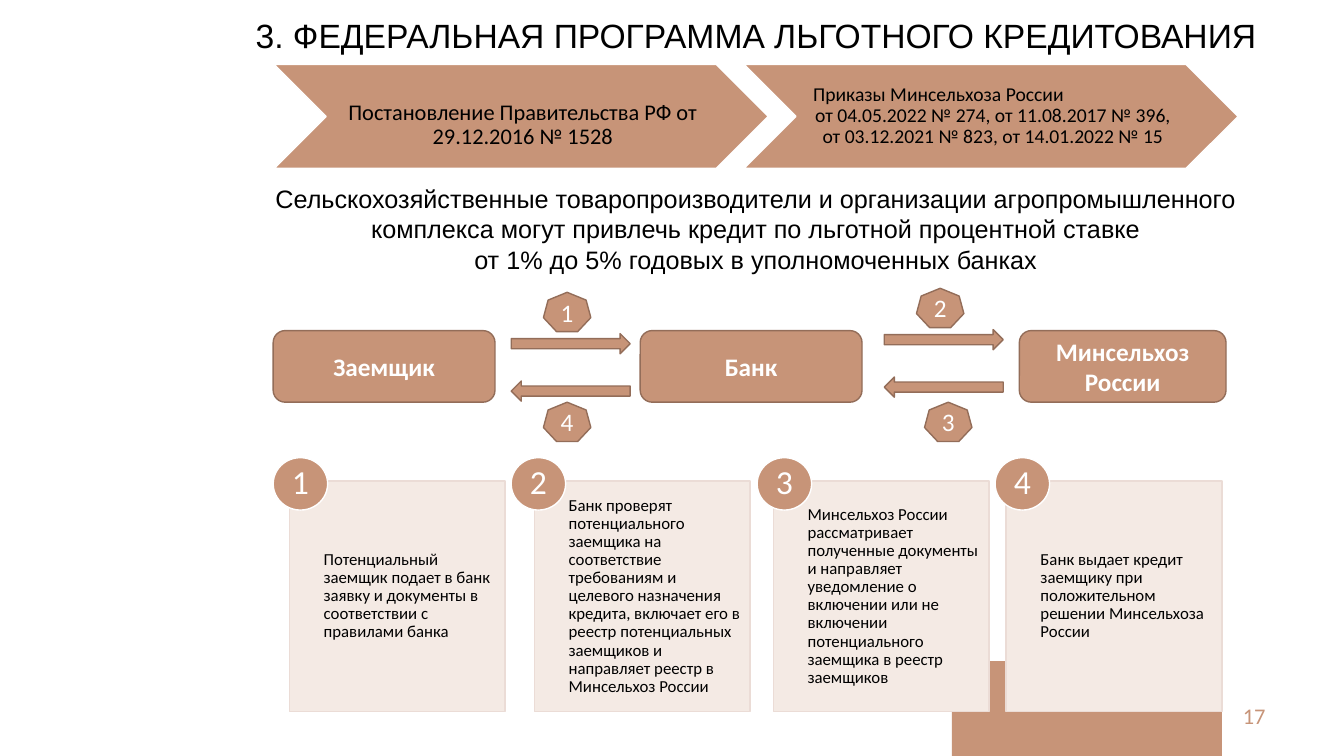
from pptx import Presentation
from pptx.dml.color import RGBColor
from pptx.enum.shapes import MSO_SHAPE
from pptx.enum.text import MSO_ANCHOR, PP_ALIGN
from pptx.util import Inches, Pt

COPPER, BROWN, CREAM, SAND = "C79478", "936D59", "F4EAE4", "EBDCD6"
WHITE, BLACK = "FFFFFF", "000000"
LEFT = 2.71  # left edge shared by the flow row and the first card


def color(value):
    return RGBColor.from_string(value)


def write(shape, lines, size, ink, font="Calibri", bold=False, align=PP_ALIGN.CENTER,
          anchor=MSO_ANCHOR.MIDDLE, insets=(0.1, 0.05, 0.1, 0.05), spacing=1):
    frame = shape.text_frame
    frame.word_wrap = True
    frame.vertical_anchor = anchor
    (frame.margin_left, frame.margin_top,
     frame.margin_right, frame.margin_bottom) = map(Inches, insets)
    frame.text = "\n".join(lines)
    for paragraph in frame.paragraphs:
        paragraph.alignment = align
        paragraph.line_spacing = spacing
        paragraph.font.name = font
        paragraph.font.size = Pt(size)
        paragraph.font.bold = bold
        paragraph.font.color.rgb = color(ink)


def add_block(slide, kind, box, fill=COPPER, line=BROWN):
    shape = slide.shapes.add_shape(kind, *map(Inches, box))
    shape.shadow.inherit = False
    shape.fill.solid()
    shape.fill.fore_color.rgb = color(fill)
    if line:
        shape.line.color.rgb = color(line)
        shape.line.width = Pt(1)
    else:
        shape.line.fill.background()
    return shape


def add_text(slide, box, lines, size, ink, **style):
    write(slide.shapes.add_textbox(*map(Inches, box)), lines, size, ink, **style)


def add_title(slide, box, text):
    title = slide.shapes.title
    title.left, title.top, title.width, title.height = map(Inches, box)
    write(title, [text], 24, BLACK, font="Arial", anchor=MSO_ANCHOR.TOP)


def add_decrees(slide, left, top, width, height):
    """Two chevrons; the second starts inside the notch of the first."""
    step = width - 0.24
    decree, orders = (
        add_block(slide, MSO_SHAPE.CHEVRON, (left + i * step, top, width, height), line=WHITE)
        for i in range(2))
    write(decree, ["Постановление Правительства РФ от 29.12.2016 № 1528"], 16, BLACK,
          insets=(0.04, 0.18, 0.01, 0.01), spacing=0.9)
    write(orders, ["Приказы Минсельхоза России",
                   "от 04.05.2022 № 274, от 11.08.2017 № 396,",
                   "от 03.12.2021 № 823, от 14.01.2022 № 15"], 14, BLACK,
          insets=(0.06, 0.02, 0.02, 0.02), spacing=0.9)
    first_line = orders.text_frame.paragraphs[0]
    first_line.alignment = PP_ALIGN.LEFT
    first_line._p.get_or_add_pPr().set("marL", str(Inches(0.11)))


def add_exchange(slide, left, top, there, back, back_shift):
    """Arrows there and back, each with its step number."""
    arrows = ((MSO_SHAPE.RIGHT_ARROW, top, there, top - 0.41, 0),
              (MSO_SHAPE.LEFT_ARROW, top + 0.47, back, 3.99, back_shift))
    for kind, arrow_top, number, badge_top, shift in arrows:
        add_block(slide, kind, (left, arrow_top, 1.18, 0.2))
        badge = add_block(slide, MSO_SHAPE.HEPTAGON, (left + 0.32 + shift, badge_top, 0.47, 0.39))
        write(badge, [number], 18, WHITE)


def add_flow(slide, top, height):
    parties = ((LEFT, 2.2, "Заемщик"), (6.35, 2.2, "Банк"), (10.11, 2.05, "Минсельхоз России"))
    for left, width, name in parties:
        party = add_block(slide, MSO_SHAPE.ROUNDED_RECTANGLE, (left, top, width, height))
        write(party, [name], 18, WHITE, bold=True)
    add_exchange(slide, 5.07, top + 0.03, "1", "4", 0)
    add_exchange(slide, 8.77, top - 0.01, "2", "3", 0.08)


def add_card(slide, left, top, badge_left, number, text):
    card = add_block(slide, MSO_SHAPE.RECTANGLE, (left, top, 2.14, 2.29), CREAM, SAND)
    write(card, [text], 12, BLACK, align=PP_ALIGN.LEFT,
          insets=(0.34, 0.09, 0.09, 0.09), spacing=0.9)
    badge = add_block(slide, MSO_SHAPE.OVAL, (badge_left, top - 0.23, 0.54, 0.52), line=WHITE)
    write(badge, [str(number)], 24, WHITE, insets=(0, 0, 0, 0), spacing=0.9)


def add_cards(slide, top):
    steps = (
        (2.87, LEFT, "Потенциальный заемщик подает в банк заявку и документы "
                     "в соответствии с правилами банка"),
        (5.3, 5.07, "Банк проверят потенциального заемщика на соответствие требованиям "
                    "и целевого назначения кредита, включает его в реестр потенциальных "
                    "заемщиков и направляет реестр в Минсельхоз России"),
        (7.67, 7.51, "Минсельхоз России рассматривает полученные документы и направляет "
                     "уведомление о включении или не включении потенциального заемщика "
                     "в реестр заемщиков"),
        (9.98, 9.87, "Банк выдает кредит заемщику при положительном решении "
                     "Минсельхоза России"),
    )
    for number, (left, badge_left, text) in enumerate(steps, 1):
        add_card(slide, left, top, badge_left, number, text)


def main():
    presentation = Presentation()
    presentation.slide_width, presentation.slide_height = Inches(13.33), Inches(7.5)
    slide = presentation.slides.add_slide(presentation.slide_layouts[5])

    # Corner accent and page number
    add_block(slide, MSO_SHAPE.RECTANGLE, (9.44, 6.56, 2.68, 0.94), line=None)
    add_text(slide, (9.65, 6.9, 3, 0.4), ["17"], 16, COPPER, align=PP_ALIGN.RIGHT)

    # Heading, legal basis and summary
    add_title(slide, (2.36, 0.1, 10.28, 0.5), "3. ФЕДЕРАЛЬНАЯ ПРОГРАММА ЛЬГОТНОГО КРЕДИТОВАНИЯ")
    add_decrees(slide, 2.72, 0.64, 4.9, 1.03)
    add_text(slide, (2.55, 1.77, 9.89, 1.01),
             ["Сельскохозяйственные товаропроизводители и организации агропромышленного "
              "комплекса могут привлечь кредит по льготной процентной ставке",
              "от 1% до 5% годовых в уполномоченных банках"],
             18, BLACK, font="Arial", anchor=MSO_ANCHOR.TOP)

    # Loan process and its steps
    add_flow(slide, 3.28, 0.71)
    add_cards(slide, 4.77)

    presentation.save("out.pptx")


if __name__ == "__main__":
    main()
